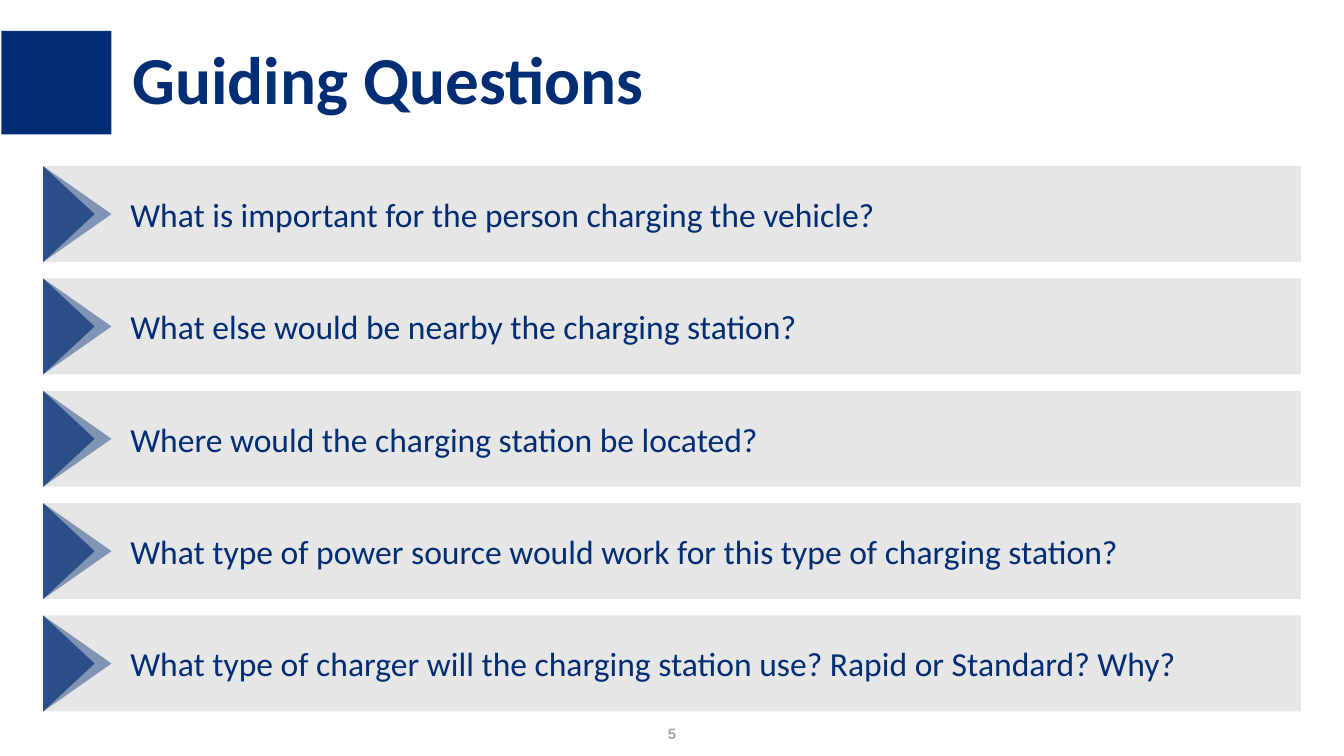
"""Build the Guiding Questions slide: a title and five arrow-marked question bars."""
from dataclasses import dataclass
from typing import Any

import lxml.etree
import pptx
import pptx.dml.color
import pptx.enum.shapes
import pptx.enum.text
import pptx.oxml.ns
import pptx.util

NAVY = pptx.dml.color.RGBColor(0x00, 0x2D, 0x73)
LIGHT_GRAY = pptx.dml.color.RGBColor(0xE7, 0xE6, 0xE6)
MID_GRAY = pptx.dml.color.RGBColor(0xA5, 0xA5, 0xA5)

SLIDE_WIDTH = pptx.util.Inches(10)
SLIDE_HEIGHT = SLIDE_WIDTH * 9 // 16
GRID_STEP = SLIDE_WIDTH / 100
ROW_PITCH = 8.36

RECTANGLE = pptx.enum.shapes.MSO_SHAPE.RECTANGLE
TRIANGLE = pptx.enum.shapes.MSO_SHAPE.FLOWCHART_MERGE
MIDDLE = pptx.enum.text.MSO_ANCHOR.MIDDLE
TOP = pptx.enum.text.MSO_ANCHOR.TOP
LEFT = pptx.enum.text.PP_ALIGN.LEFT
CENTER = pptx.enum.text.PP_ALIGN.CENTER


@dataclass(frozen=True)
class Box:
    """A rectangle in columns and rows of the slide grid."""

    column: float
    row: float
    columns: float
    rows: float

    def lengths(self) -> list[int]:
        """Return left, top, width and height as slide lengths."""
        return [round(value * GRID_STEP) for value in (self.column, self.row, self.columns, self.rows)]


@dataclass(frozen=True)
class Arrow:
    """A right-pointing triangle, by its depth in columns and its opacity."""

    depth: float
    opacity: int


@dataclass(frozen=True)
class TextStyle:
    """The format of a text frame, its paragraph and its font."""

    frame: dict[str, Any]
    paragraph: dict[str, Any]
    font: dict[str, Any]
    color: pptx.dml.color.RGBColor


def margins(left: float, right: float, vertical: float) -> dict[str, int]:
    """Return text frame margins given in grid columns and rows."""
    return {
        "margin_left": round(left * GRID_STEP),
        "margin_right": round(right * GRID_STEP),
        "margin_top": round(vertical * GRID_STEP),
        "margin_bottom": round(vertical * GRID_STEP),
    }


TITLE_BOX = Box(9.15, 2.05, 89.2, 8.2)
TITLE_BLOCK = Box(0.1, 2.3, 8.2, 7.7)
FIRST_BAR = Box(3.2, 12.36, 93.6, 7.14)
NUMBER_BOX = Box(47.25, 53.5, 5.5, 2.3)
ARROWS = (Arrow(3.84, 67), Arrow(5.1, 44))

TITLE_STYLE = TextStyle(
    {"vertical_anchor": MIDDLE, "auto_size": pptx.enum.text.MSO_AUTO_SIZE.NONE, **margins(0.7, 0.7, 0.4)},
    {"alignment": LEFT, "line_spacing": 0.9},
    {"name": "Calibri", "size": pptx.util.Pt(36), "bold": True},
    NAVY,
)
QUESTION_STYLE = TextStyle(
    {"vertical_anchor": MIDDLE, "word_wrap": True, **margins(6.5, 1, 1)},
    {"alignment": LEFT},
    {"name": "Calibri", "size": pptx.util.Pt(18)},
    NAVY,
)
NUMBER_STYLE = TextStyle(
    {"vertical_anchor": TOP, "word_wrap": True, **margins(0.7, 0.7, 0.4)},
    {"alignment": CENTER},
    {"name": "Arial", "size": pptx.util.Pt(8), "bold": True},
    MID_GRAY,
)

QUESTIONS = (
    "What is important for the person charging the vehicle?",
    "What else would be nearby the charging station?",
    "Where would the charging station be located?",
    "What type of power source would work for this type of charging station?",
    "What type of charger will the charging station use? Rapid or Standard? Why?",
)


def apply_format(target: Any, values: dict[str, Any]) -> None:
    """Set each named attribute on the target."""
    for name, value in values.items():
        setattr(target, name, value)


def write_text(shape: Any, text: str, style: TextStyle) -> None:
    """Put one formatted paragraph in the shape."""
    frame = shape.text_frame
    frame.text = text
    paragraph = frame.paragraphs[0]
    font = paragraph.runs[0].font
    apply_format(frame, style.frame)
    apply_format(paragraph, style.paragraph)
    apply_format(font, style.font)
    font.color.rgb = style.color


def add_filled_shape(slide: Any, preset: Any, box: Box, color: pptx.dml.color.RGBColor) -> Any:
    """Add a flat shape without outline or shadow."""
    shape = slide.shapes.add_shape(preset, *box.lengths())
    shape.shadow.inherit = False
    shape.fill.solid()
    shape.fill.fore_color.rgb = color
    shape.line.fill.background()
    return shape


def add_arrow(slide: Any, bar: Box, arrow: Arrow) -> None:
    """Add a translucent triangle that starts at the bar's left edge and points right."""
    column = bar.column + (arrow.depth - bar.rows) / 2
    row = bar.row + (bar.rows - arrow.depth) / 2
    shape = add_filled_shape(slide, TRIANGLE, Box(column, row, bar.rows, arrow.depth), NAVY)
    shape.rotation = 270
    color = shape.element.spPr.find(".//" + pptx.oxml.ns.qn("a:srgbClr"))
    lxml.etree.SubElement(color, pptx.oxml.ns.qn("a:alpha"), val=str(arrow.opacity * 1000))


def add_question(slide: Any, index: int, question: str) -> None:
    """Add one question bar with its arrows."""
    bar = Box(FIRST_BAR.column, FIRST_BAR.row + index * ROW_PITCH, FIRST_BAR.columns, FIRST_BAR.rows)
    shape = add_filled_shape(slide, RECTANGLE, bar, LIGHT_GRAY)
    write_text(shape, question, QUESTION_STYLE)
    for arrow in ARROWS:
        add_arrow(slide, bar, arrow)


def main() -> None:
    """Build and save the presentation."""
    presentation = pptx.Presentation()
    apply_format(presentation, {"slide_width": SLIDE_WIDTH, "slide_height": SLIDE_HEIGHT})
    slide = presentation.slides.add_slide(presentation.slide_layouts.get_by_name("Title Only"))

    title = slide.shapes.title
    apply_format(title, dict(zip(("left", "top", "width", "height"), TITLE_BOX.lengths())))
    write_text(title, "Guiding Questions", TITLE_STYLE)
    add_filled_shape(slide, RECTANGLE, TITLE_BLOCK, NAVY)

    for index, question in enumerate(QUESTIONS):
        add_question(slide, index, question)

    write_text(slide.shapes.add_textbox(*NUMBER_BOX.lengths()), "5", NUMBER_STYLE)
    presentation.save("out.pptx")


if __name__ == "__main__":
    main()
